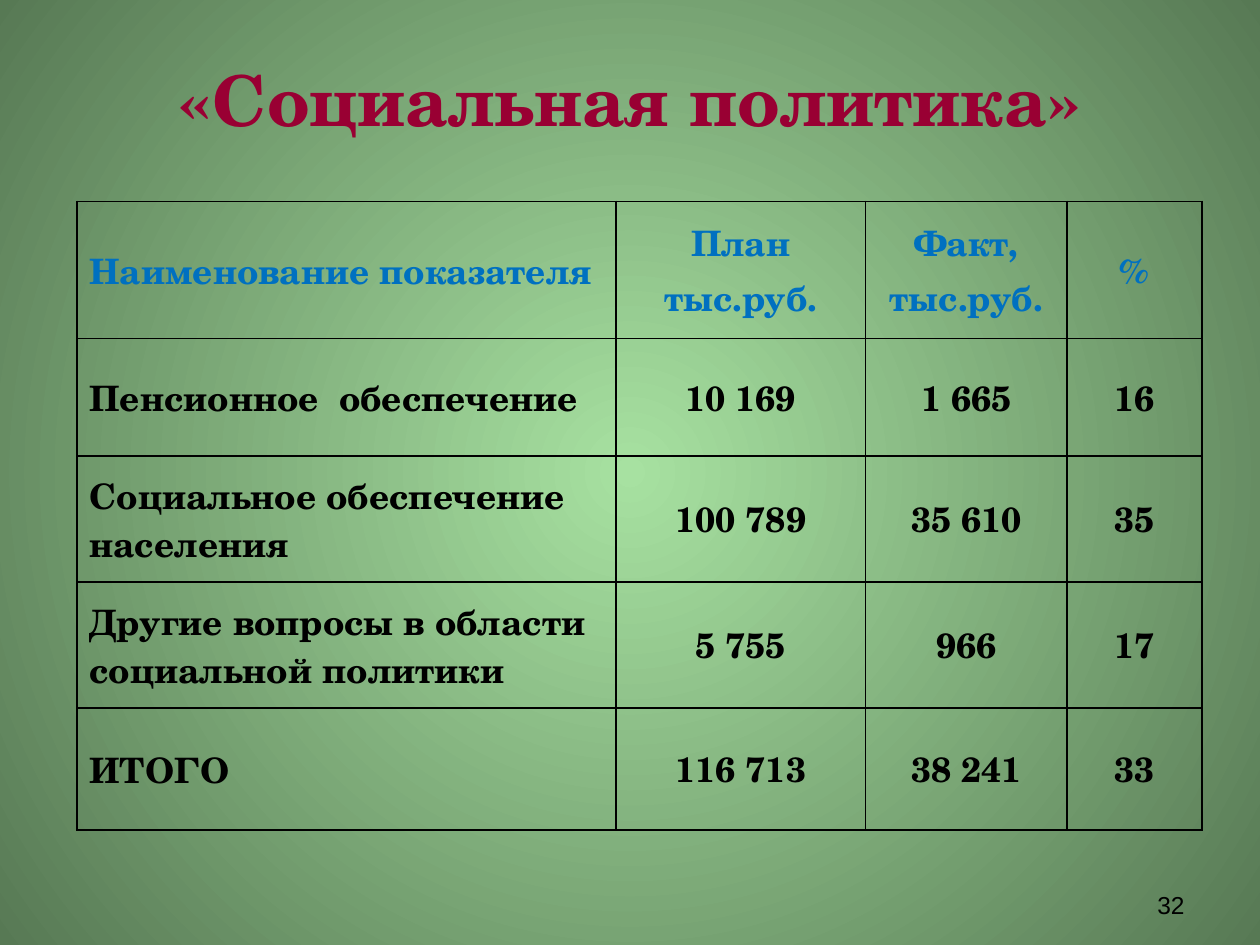
import pptx
import pptx.dml.color
import pptx.enum.text
import pptx.util
from lxml import etree
from pptx.oxml.ns import qn

COLORS = {"center": "A7E1A1", "edge": "577954", "title": "990033",
          "header": "0070C0", "text": "000000"}
SERIF = "TeX Gyre Schola"
ALIGN = pptx.enum.text.PP_ALIGN
ANCHOR = pptx.enum.text.MSO_ANCHOR


def rgb(name):
    return pptx.dml.color.RGBColor.from_string(COLORS[name])


def write(tf, text, size=20, font=SERIF, color="text", bold=True,
          align=ALIGN.CENTER, spacing=None):
    """Write each line of text as a paragraph of the text frame."""
    tf.word_wrap = True
    for i, line in enumerate(text.split("\n")):
        p = tf.paragraphs[0] if i == 0 else tf.add_paragraph()
        p.alignment = align
        if spacing:
            p.line_spacing = spacing
        r = p.add_run()
        r.text = line
        r.font.size = pptx.util.Pt(size)
        r.font.name = font
        r.font.bold = bold
        r.font.color.rgb = rgb(color)


prs = pptx.Presentation()
prs.slide_width = pptx.util.Inches(10)
prs.slide_height = pptx.util.Inches(7.5)
W, H = prs.slide_width, prs.slide_height
s = prs.slides.add_slide(prs.slide_layouts[6])

# Background: circular gradient from the middle
fill = s.background.fill
fill.gradient()
for stop, name in zip(fill.gradient_stops, ("center", "edge")):
    stop.color.rgb = rgb(name)
grad = s.background._cSld.find(".//" + qn("a:gradFill"))
lin = grad.find(qn("a:lin"))
circle = etree.Element(qn("a:path"), path="circle")
etree.SubElement(circle, qn("a:fillToRect"),
                 {side: "50000" for side in "ltrb"})
grad.replace(lin, circle)

# Slide number
sp = s.shapes.add_textbox(int(0.717 * W), int(0.911 * H),
                          int(0.233 * W), int(0.069 * H))
sp.text_frame.vertical_anchor = ANCHOR.BOTTOM
write(sp.text_frame, "32", size=14, font="Arial", bold=False, align=ALIGN.RIGHT)

# Table: column widths and row heights in inches
rows = [
    ("Наименование показателя", "План тыс.руб.", "Факт, тыс.руб.", "%"),
    ("Пенсионное  обеспечение", "10 169", "1 665", "16"),
    ("Социальное обеспечение\nнаселения", "100 789", "35 610", "35"),
    ("Другие вопросы в области\nсоциальной политики", "5 755", "966", "17"),
    ("ИТОГО", "116 713", "38 241", "33"),
]
col_widths = [4.28, 1.98, 1.6, 1.07]
row_heights = [1.09, 0.93, 1, 1, 0.97]
frame = s.shapes.add_table(len(rows), len(col_widths), int(0.061 * W), int(0.213 * H),
                           pptx.util.Inches(sum(col_widths)),
                           pptx.util.Inches(sum(row_heights)))
table = frame.table
table.first_row = False
table.horz_banding = False
for col, width in zip(table.columns, col_widths):
    col.width = pptx.util.Inches(width)
for row, height in zip(table.rows, row_heights):
    row.height = pptx.util.Inches(height)

for i, values in enumerate(rows):
    for j, value in enumerate(values):
        cell = table.cell(i, j)
        cell.vertical_anchor = ANCHOR.MIDDLE
        cell.fill.background()
        write(cell.text_frame, value, color="text" if i else "header",
              align=ALIGN.CENTER if j else ALIGN.LEFT,
              spacing=None if j else 0.9)
        # Cell borders go before the fill
        tcPr = cell._tc.get_or_add_tcPr()
        for k, side in enumerate("LRTB"):
            ln = etree.Element(qn("a:ln" + side), w=str(pptx.util.Pt(1)))
            solid = etree.SubElement(ln, qn("a:solidFill"))
            etree.SubElement(solid, qn("a:srgbClr"), val=COLORS["text"])
            tcPr.insert(k, ln)

# Title
sp = s.shapes.add_textbox(0, int(0.053 * H), W, int(0.103 * H))
write(sp.text_frame, "«Социальная политика»", size=40, color="title")

prs.save("out.pptx")
